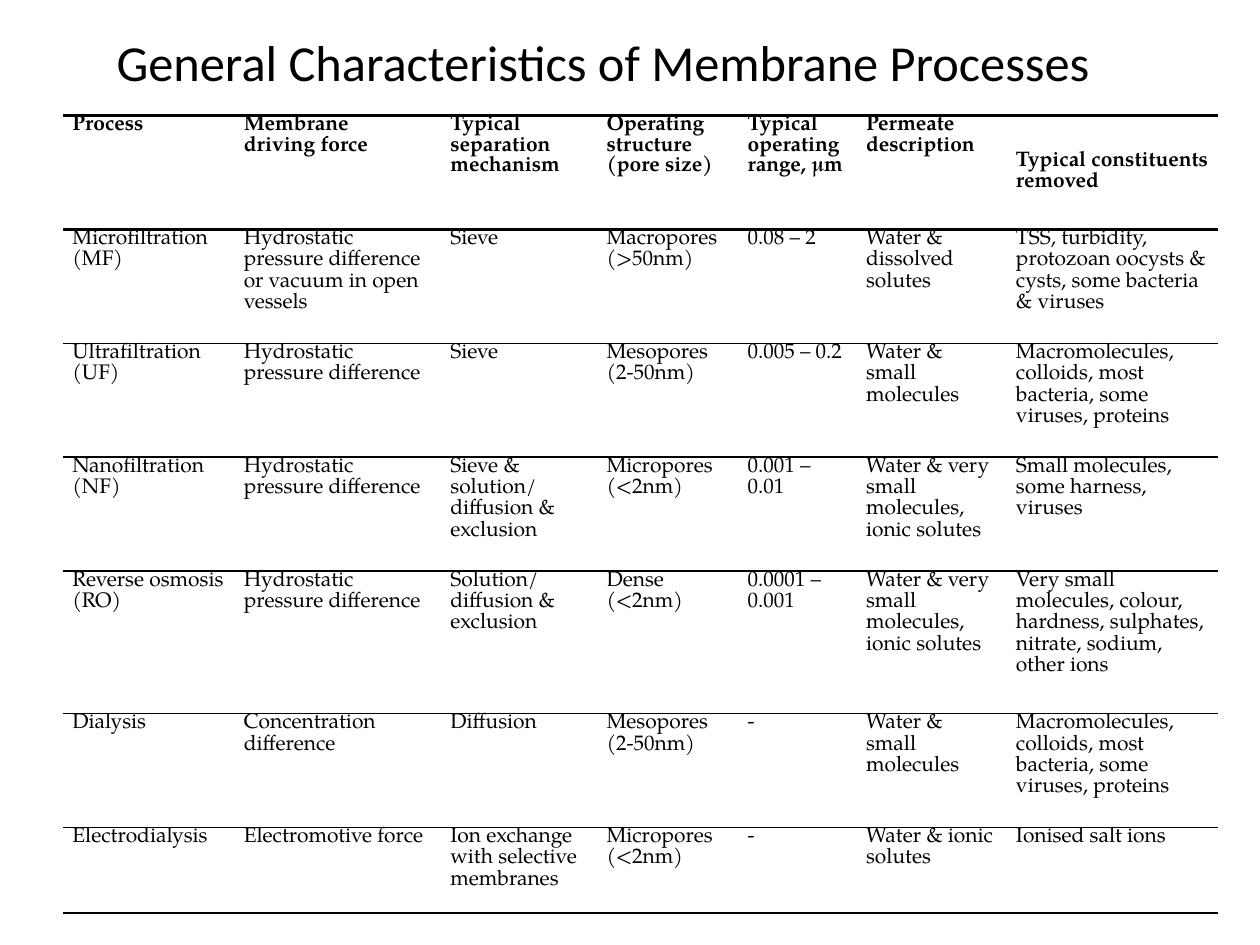
from lxml.etree import SubElement
from pptx import Presentation
from pptx.dml.color import RGBColor
from pptx.enum.text import MSO_ANCHOR, PP_ALIGN
from pptx.oxml.ns import qn
from pptx.util import Inches, Pt

COLORS = {"ink": "000000"}
TITLE = "General Characteristics of Membrane Processes "
TITLE_FORMAT = {"name": "Calibri", "size": Pt(28.8), "bold": False}
BODY_FORMAT = {"name": "TeX Gyre Pagella", "size": Pt(12), "bold": False}
HEADER_FORMAT = {**BODY_FORMAT, "bold": True}
CELL_FORMAT = {
    "margin_left": Pt(5.4),
    "margin_right": Pt(5.4),
    "margin_top": 0,
    "margin_bottom": 0,
    "vertical_anchor": MSO_ANCHOR.TOP,
}
PLAIN_STYLE = "{2D5ABB26-0587-4C30-8999-92F81FD0307C}"
RULE_WIDTHS = {"heavy": 1.5, "light": 1}
COLUMN_WIDTHS = [1.36, 1.64, 1.24, 1.12, 0.94, 1.19, 1.68]
ROW_UNITS = [4, 4, 4, 4, 5, 4, 3]
TABLE_HEIGHT = 6.33

HYDROSTATIC = "Hydrostatic pressure difference"
MESOPORES = "Mesopores (2-50nm)"
MICROPORES = "Micropores (<2nm)"
SMALL_PERMEATE = "Water & small molecules"
IONIC_PERMEATE = "Water & very small molecules, ionic solutes"
MACROMOLECULES = "Macromolecules, colloids, most bacteria, some viruses, proteins"

PROCESSES = [
    ["Process", "Membrane\ndriving force", "Typical separation\nmechanism",
     "Operating structure (pore size)", "Typical operating range, μm",
     "Permeate description", "Typical constituents removed"],
    ["Microfiltration\n(MF)", HYDROSTATIC + " or vacuum in open vessels", "Sieve",
     "Macropores (>50nm)", "0.08 – 2", "Water & dissolved solutes",
     "TSS, turbidity, protozoan oocysts & cysts, some bacteria & viruses"],
    ["Ultrafiltration\n(UF)", HYDROSTATIC, "Sieve", MESOPORES, "0.005 – 0.2",
     SMALL_PERMEATE, MACROMOLECULES],
    ["Nanofiltration\n(NF)", HYDROSTATIC, "Sieve & solution/ diffusion & exclusion",
     MICROPORES, "0.001 – 0.01", IONIC_PERMEATE,
     "Small molecules, some harness, viruses"],
    ["Reverse osmosis\n(RO)", HYDROSTATIC, "Solution/ diffusion & exclusion",
     "Dense (<2nm)", "0.0001 – 0.001", IONIC_PERMEATE,
     "Very small molecules, colour, hardness, sulphates, nitrate, sodium, other ions"],
    ["Dialysis", "Concentration difference", "Diffusion", MESOPORES, "-",
     SMALL_PERMEATE, MACROMOLECULES],
    ["Electrodialysis", "Electromotive force", "Ion exchange with selective membranes",
     MICROPORES, "-", "Water & ionic solutes", "Ionised salt ions"],
]


def apply_format(target, values):
    """Set every attribute named in a dict of format values."""
    for attribute, value in values.items():
        setattr(target, attribute, value)


def write_text(paragraph, wording, font_format):
    """Fill a paragraph and format each of its runs."""
    paragraph.text = wording
    for run in paragraph.runs:
        apply_format(run.font, font_format)
        run.font.color.rgb = RGBColor.from_string(COLORS["ink"])


def add_title(slide):
    """Add the centred slide title."""
    heading = slide.shapes.add_textbox(
        Inches(0.5), Inches(0.3), Inches(8.67), Inches(0.37))
    apply_format(heading.text_frame, {
        "word_wrap": True, "vertical_anchor": MSO_ANCHOR.MIDDLE,
        "margin_top": 0, "margin_bottom": 0})
    caption = heading.text_frame.paragraphs[0]
    caption.alignment = PP_ALIGN.CENTER
    write_text(caption, TITLE, TITLE_FORMAT)


def rule_cell(cell, top, bottom):
    """Draw the rules above and below a cell and leave its sides open."""
    properties = cell._tc.get_or_add_tcPr()
    sides = {"a:lnL": None, "a:lnR": None, "a:lnT": top, "a:lnB": bottom}
    for position, (side, weight) in enumerate(sides.items()):
        rule = properties.makeelement(qn(side), {})
        properties.insert(position, rule)
        if weight is None:
            SubElement(rule, qn("a:noFill"))
        else:
            rule.set("w", str(Pt(RULE_WIDTHS[weight])))
            paint = SubElement(rule, qn("a:solidFill"))
            SubElement(paint, qn("a:srgbClr"), val=COLORS["ink"])


def fill_cell(cell, wording, font_format):
    """Write one table entry in single line spacing."""
    apply_format(cell, CELL_FORMAT)
    cell.fill.background()
    entry = cell.text_frame.paragraphs[0]
    entry.line_spacing = 1.0
    write_text(entry, wording, font_format)


def add_process_table(slide):
    """Add the table that compares the membrane processes."""
    frame = slide.shapes.add_table(
        len(PROCESSES), len(COLUMN_WIDTHS), Inches(0.5), Pt(66),
        Inches(sum(COLUMN_WIDTHS)), Inches(TABLE_HEIGHT))
    table = frame.table
    apply_format(table, {"first_row": False, "horz_banding": False})
    table._tbl.tblPr.find(qn("a:tableStyleId")).text = PLAIN_STYLE
    for column, width in zip(table.columns, COLUMN_WIDTHS):
        column.width = Inches(width)
    for row, units in zip(table.rows, ROW_UNITS):
        row.height = Inches(TABLE_HEIGHT * units / sum(ROW_UNITS))

    last = len(PROCESSES) - 1
    rules = ["heavy", "heavy"] + ["light"] * (last - 1) + ["heavy"]
    for row_index, process in enumerate(PROCESSES):
        font_format = BODY_FORMAT if row_index else HEADER_FORMAT
        for column_index, wording in enumerate(process):
            cell = table.cell(row_index, column_index)
            fill_cell(cell, wording, font_format)
            rule_cell(cell, rules[row_index], rules[row_index + 1])
    table.cell(0, len(COLUMN_WIDTHS) - 1).vertical_anchor = MSO_ANCHOR.MIDDLE


def main():
    """Build and save the slide."""
    presentation = Presentation()
    apply_format(presentation, {"slide_width": Inches(10), "slide_height": Inches(7.5)})
    slide = presentation.slides.add_slide(presentation.slide_layouts[6])
    add_title(slide)
    add_process_table(slide)
    presentation.save("out.pptx")


if __name__ == "__main__":
    main()
